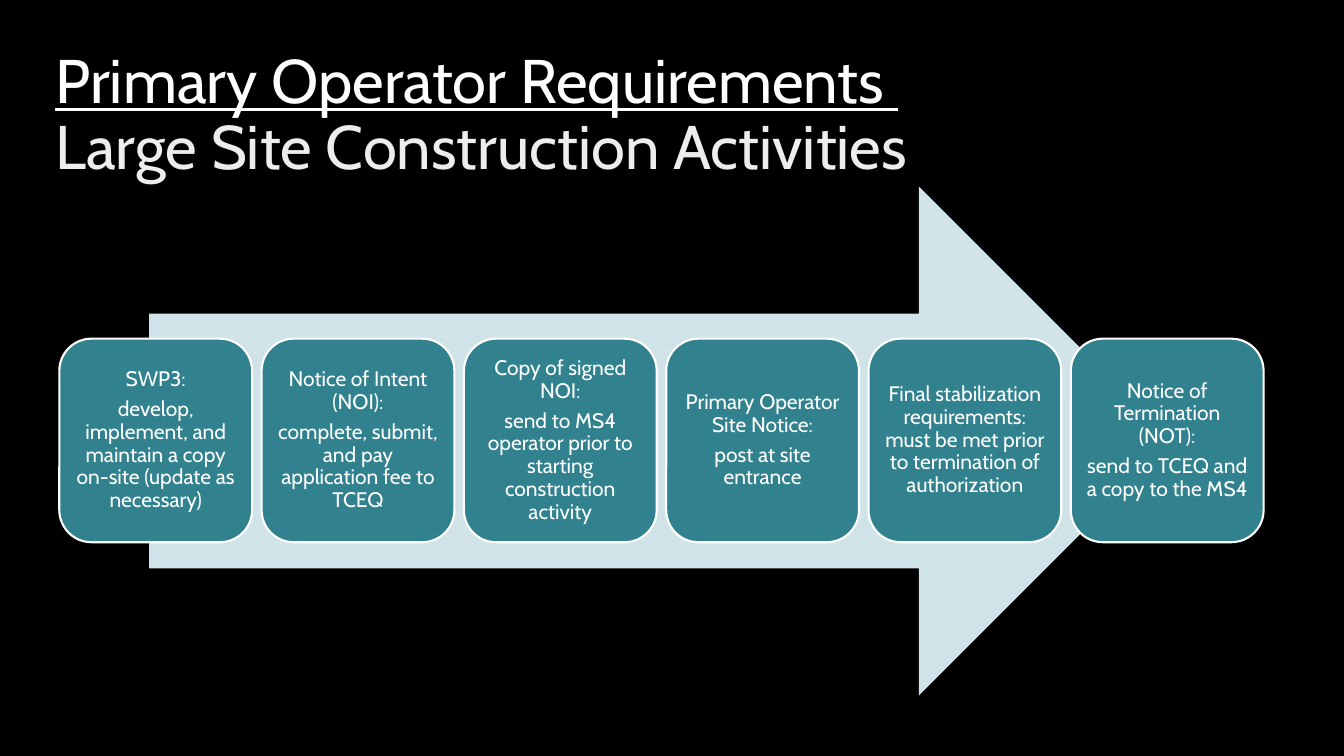
from dataclasses import dataclass

from pptx import Presentation
from pptx.dml.color import RGBColor
from pptx.enum.shapes import MSO_SHAPE as Shape
from pptx.enum.text import MSO_ANCHOR as Anchor, MSO_AUTO_SIZE as AutoSize, PP_ALIGN as Align
from pptx.util import Pt


@dataclass(frozen=True)
class Theme:
    font: str = "Cabin"
    background: str = "000000"
    text: str = "FFFFFF"
    subtitle: str = "EDEDED"
    arrow: str = "CFE3E8"
    card: str = "31828E"
    title_size: float = 44
    card_size: float = 15


THEME = Theme()

STEPS = [
    ["SWP3:", "develop, implement, and maintain a copy on-site (update as necessary)"],
    ["Notice of Intent (NOI):", "complete, submit, and pay application fee to TCEQ"],
    ["Copy of signed NOI:", "send to MS4 operator prior to starting construction activity"],
    ["Primary Operator Site Notice:", "post at site entrance"],
    ["Final stabilization requirements: must be met prior to termination of authorization"],
    ["Notice of Termination (NOT):", "send to TCEQ and a copy to the MS4"],
]


def color(code):
    return RGBColor.from_string(code)


def add_text(para, text, size, fill=THEME.text, underline=False, align=Align.LEFT, after=0):
    para.alignment = align
    para.line_spacing = 0.9
    para.space_before = Pt(0)
    para.space_after = Pt(after)
    span = para.add_run()
    span.text = text
    span.font.name = THEME.font
    span.font.size = Pt(size)
    span.font.underline = underline
    span.font.color.rgb = color(fill)


def add_block(page, kind, left, top, width, height, fill):
    block = page.shapes.add_shape(kind, Pt(left), Pt(top), Pt(width), Pt(height))
    block.shadow.inherit = False
    block.fill.solid()
    block.fill.fore_color.rgb = color(fill)
    block.line.fill.background()
    return block


def set_title(page, heading, subtitle):
    title = page.shapes.title
    title.left, title.top, title.width, title.height = Pt(32.4), Pt(23.8), Pt(671.8), Pt(118.8)
    frame = title.text_frame
    frame.auto_size = AutoSize.NONE
    frame.word_wrap = True
    frame.vertical_anchor = Anchor.MIDDLE
    para = frame.paragraphs[0]
    add_text(para, heading, THEME.title_size, underline=True)
    para.add_line_break()
    add_text(para, subtitle, THEME.title_size, fill=THEME.subtitle)


def add_card(page, left, lines):
    card = add_block(page, Shape.ROUNDED_RECTANGLE, left, 241.9, 137.7, 145.4, THEME.card)
    card.line.color.rgb = color(THEME.text)
    card.line.width = Pt(1.5)
    frame = card.text_frame
    frame.word_wrap = True
    frame.vertical_anchor = Anchor.MIDDLE
    frame.margin_left = frame.margin_right = frame.margin_top = frame.margin_bottom = Pt(4.5)
    for index, line in enumerate(lines):
        para = frame.add_paragraph() if index else frame.paragraphs[0]
        add_text(para, line, THEME.card_size, align=Align.CENTER, after=5.25)


def main():
    deck = Presentation()
    deck.slide_width, deck.slide_height = Pt(960), Pt(540)
    page = deck.slides.add_slide(deck.slide_layouts.get_by_name("Title Only"))
    page.background.fill.solid()
    page.background.fill.fore_color.rgb = color(THEME.background)

    set_title(page, "Primary Operator Requirements ", "Large Site Construction Activities")
    add_block(page, Shape.RIGHT_ARROW, 106.6, 133.2, 731.5, 363.6, THEME.arrow)
    for index, lines in enumerate(STEPS):
        add_card(page, 42.4 + index * 144.5, lines)

    deck.save("out.pptx")


if __name__ == "__main__":
    main()
